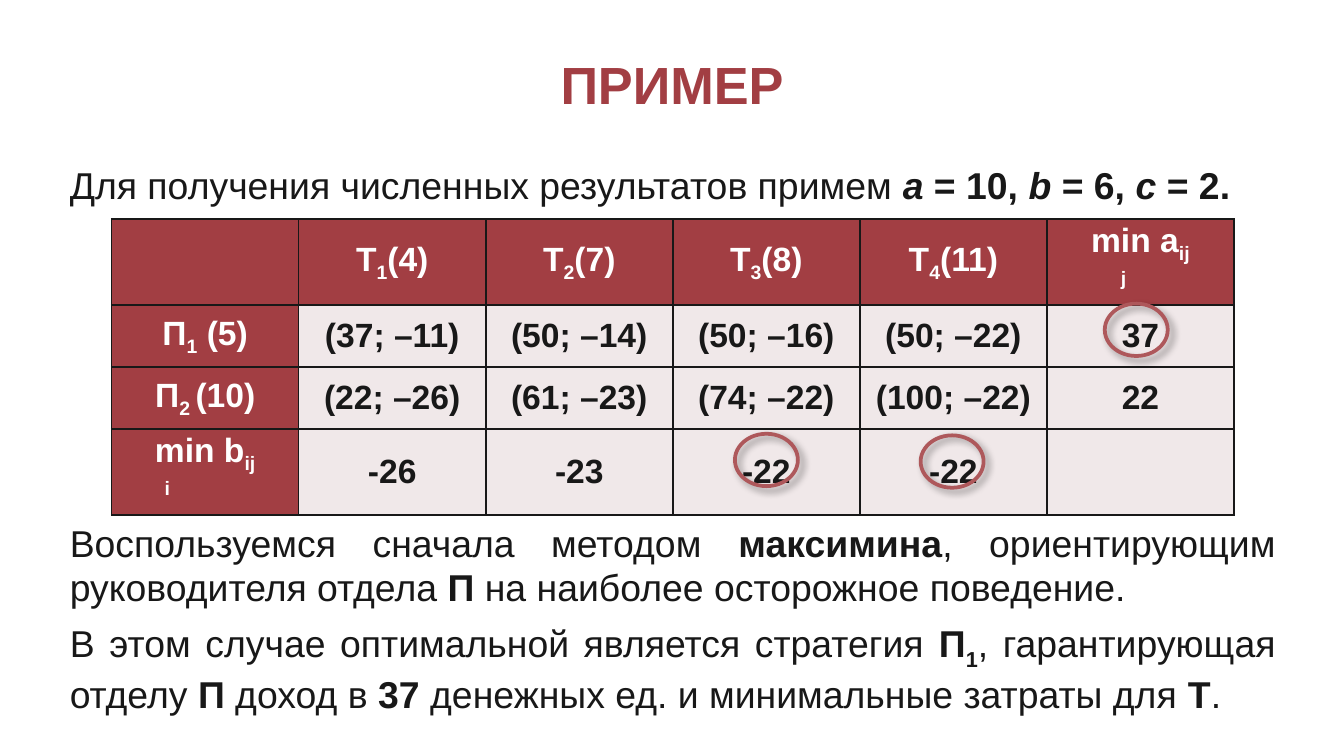
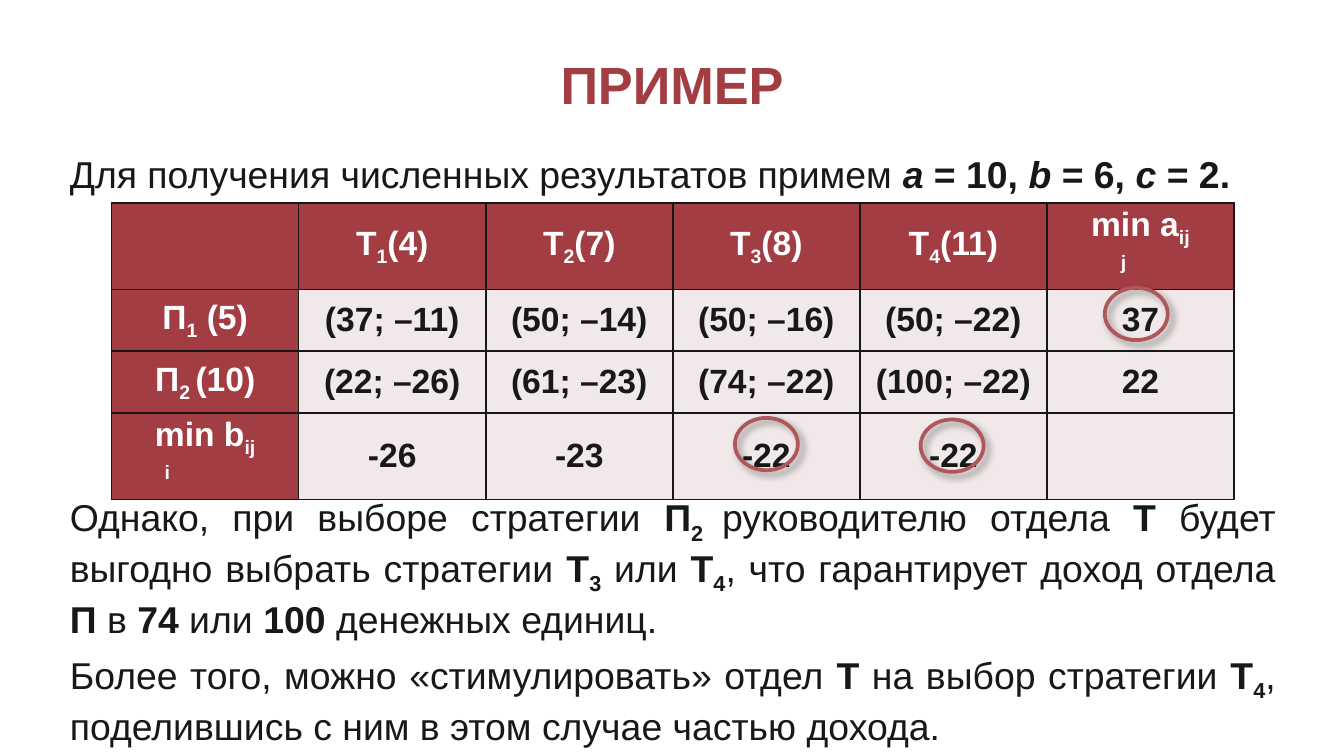
"""Two slides that solve a payoff table by the maximin rule."""
from typing import NamedTuple

from lxml.etree import SubElement
from pptx import Presentation
from pptx.dml.color import RGBColor
from pptx.enum.shapes import MSO_SHAPE as Kind
from pptx.enum.text import MSO_ANCHOR as Anchor, MSO_AUTO_SIZE as Auto, PP_ALIGN as Align
from pptx.oxml.ns import qn
from pptx.util import Cm, Pt

FONT = "Arial"
RED, INK, WHITE, PALE, ROSE = "A23E43", "181818", "FFFFFF", "F0E8E9", "AE585B"
COLS, COL, LEFT = 6, 3.535, 2.11
HIGH = (1.35, 1.17, 1.17, 1.35)
SIDE, WIDE = 1.07, 23.29
INTRO = "Для получения численных результатов примем */a/ = 10, /b/ = 6, /c/ = 2.*"
GRID = (
    ("", "Т_1_(4)", "Т_2_(7)", "Т_3_(8)", "Т_4_(11)", "min a_ij_\n^j^"),
    ("П_1_ (5)", "(37; –11)", "(50; –14)", "(50; –16)", "(50; –22)", "37"),
    ("П_2 _(10)", "(22; –26)", "(61; –23)", "(74; –22)", "(100; –22)", "22"),
    ("min b_ij_\n^i^", "-26", "-23", "-22", "-22", ""),
)
SHIFT = {(0, 5): 1.22, (3, 0): 0.82}


class Ring(NamedTuple):
    """Place of a ring, with its top counted from the table."""
    left: float
    top: float


class Page(NamedTuple):
    """Tops of the parts of a slide, and its closing text."""
    intro: float
    grid: float
    body: float
    tall: float
    text: str


RINGS = (Ring(20.88, 1.6), Ring(13.89, 4.06), Ring(17.4, 4.09))
PAGES = (
    Page(2.95, 4.14, 9.7, 3.89,
         "Воспользуемся сначала методом *максимина*, ориентирующим руководителя "
         "отдела *П* на наиболее осторожное поведение.\n"
         "В этом случае оптимальной является стратегия *П_1_*, гарантирующая "
         "отделу *П* доход в *37* денежных ед. и минимальные затраты для *Т*."),
    Page(2.74, 3.84, 9.22, 4.75,
         "Однако, при выборе стратегии *П_2 _*руководителю отдела *Т* будет выгодно "
         "выбрать стратегии *Т_3_* или *Т_4_*, что гарантирует доход отдела "
         "*П* в *74* или *100* денежных единиц.\n"
         "Более того, можно «стимулировать» отдел *Т* на выбор стратегии *Т_4_*, "
         "поделившись с ним в этом случае частью дохода."),
)


def tint(code: str) -> RGBColor:
    """Turn a hex string into a colour."""
    return RGBColor.from_string(code)


def split(line: str) -> list[tuple[str, str]]:
    """Cut a line into (text, marks): * bold, / italic, _ low, ^ high."""
    parts, marks, word = [], "", ""
    for char in line + "*":
        if char not in "*/_^":
            word += char
            continue
        if word:
            parts.append((word, marks))
            word = ""
        marks = marks.replace(char, "") if char in marks else marks + char
    return parts


def write(frame, text: str, *, size: float = 20, color: str = INK, bold: bool = False,
          align=Align.LEFT, after: float = 0, shift: float = 0) -> None:
    """Fill a frame with marked text; a shift indents every later paragraph."""
    frame.word_wrap = True
    for num, line in enumerate(text.split("\n")):
        para = frame.add_paragraph() if num else frame.paragraphs[0]
        para.alignment = align
        para.space_after = Pt(after)
        if num and shift:
            para.alignment = Align.LEFT
            para._p.get_or_add_pPr().set("marL", str(Cm(shift)))
        for word, marks in split(line):
            run = para.add_run()
            run.text = word
            font = run.font
            font.name, font.size = FONT, Pt(size)
            font.bold = bold or "*" in marks
            font.italic = "/" in marks
            font.color.rgb = tint(color)
            if "_" in marks or "^" in marks:
                run._r.get_or_add_rPr().set("baseline", "-25000" if "_" in marks else "30000")


def add_box(slide, top: float, tall: float, text: str, **form) -> None:
    """Add a full-width text box."""
    box = slide.shapes.add_textbox(Cm(SIDE), Cm(top), Cm(WIDE), Cm(tall))
    write(box.text_frame, text, **form)
    box.text_frame.auto_size = Auto.SHAPE_TO_FIT_TEXT


def edge(cell) -> None:
    """Draw thin dark borders round a cell."""
    props = cell._tc.get_or_add_tcPr()
    for side in ("L", "R", "T", "B"):
        line = SubElement(props, qn(f"a:ln{side}"), w=str(Pt(1)))
        fill = SubElement(line, qn("a:solidFill"))
        SubElement(fill, qn("a:srgbClr"), val=INK)


def add_grid(slide, top: float) -> None:
    """Add the payoff table."""
    table = slide.shapes.add_table(len(GRID), COLS, Cm(LEFT), Cm(top),
                                   Cm(COL * COLS), Cm(sum(HIGH))).table
    for col in table.columns:
        col.width = Cm(COL)
    for row, (texts, high) in enumerate(zip(GRID, HIGH)):
        table.rows[row].height = Cm(high)
        for col, text in enumerate(texts):
            cell, head = table.cell(row, col), row == 0 or col == 0
            edge(cell)
            cell.fill.solid()
            cell.fill.fore_color.rgb = tint(RED if head else PALE)
            cell.vertical_anchor = Anchor.MIDDLE
            cell.margin_left = cell.margin_right = Cm(0.18)
            cell.margin_top = cell.margin_bottom = 0
            write(cell.text_frame, text, size=18, color=WHITE if head else INK, bold=True,
                  align=Align.CENTER, shift=SHIFT.get((row, col), 0))


def add_ring(slide, ring: Ring, top: float) -> None:
    """Circle a chosen value with a softly shadowed ring."""
    oval = slide.shapes.add_shape(Kind.OVAL, Cm(ring.left), Cm(top + ring.top), Cm(1.19), Cm(0.99))
    oval.fill.background()
    oval.line.color.rgb = tint(ROSE)
    oval.line.width = Pt(2)
    oval.shadow.inherit = False
    glow = SubElement(oval._element.spPr.find(qn("a:effectLst")), qn("a:outerShdw"),
                      blurRad=str(Pt(4)), dist=str(Pt(3)), dir="2700000",
                      algn="tl", rotWithShape="0")
    shade = SubElement(glow, qn("a:srgbClr"), val="000000")
    SubElement(shade, qn("a:alpha"), val="40000")


def add_page(deck, page: Page) -> None:
    """Build one slide."""
    slide = deck.slides.add_slide(deck.slide_layouts[5])
    title = slide.shapes.title
    title.left, title.top, title.width, title.height = Cm(1.27), Cm(0.69), Cm(22.86), Cm(1.78)
    title.text_frame.vertical_anchor = Anchor.MIDDLE
    write(title.text_frame, "ПРИМЕР", size=28, color=RED, bold=True, align=Align.CENTER)
    add_box(slide, page.intro, 1.12, INTRO)
    add_box(slide, page.body, page.tall, page.text, align=Align.JUSTIFY, after=6)
    add_grid(slide, page.grid)
    for ring in RINGS:
        add_ring(slide, ring, page.grid)


def main() -> None:
    """Build and save the deck."""
    deck = Presentation()
    deck.slide_width, deck.slide_height = Cm(25.4), Cm(14.29)
    for page in PAGES:
        add_page(deck, page)
    deck.save("out.pptx")


if __name__ == "__main__":
    main()
